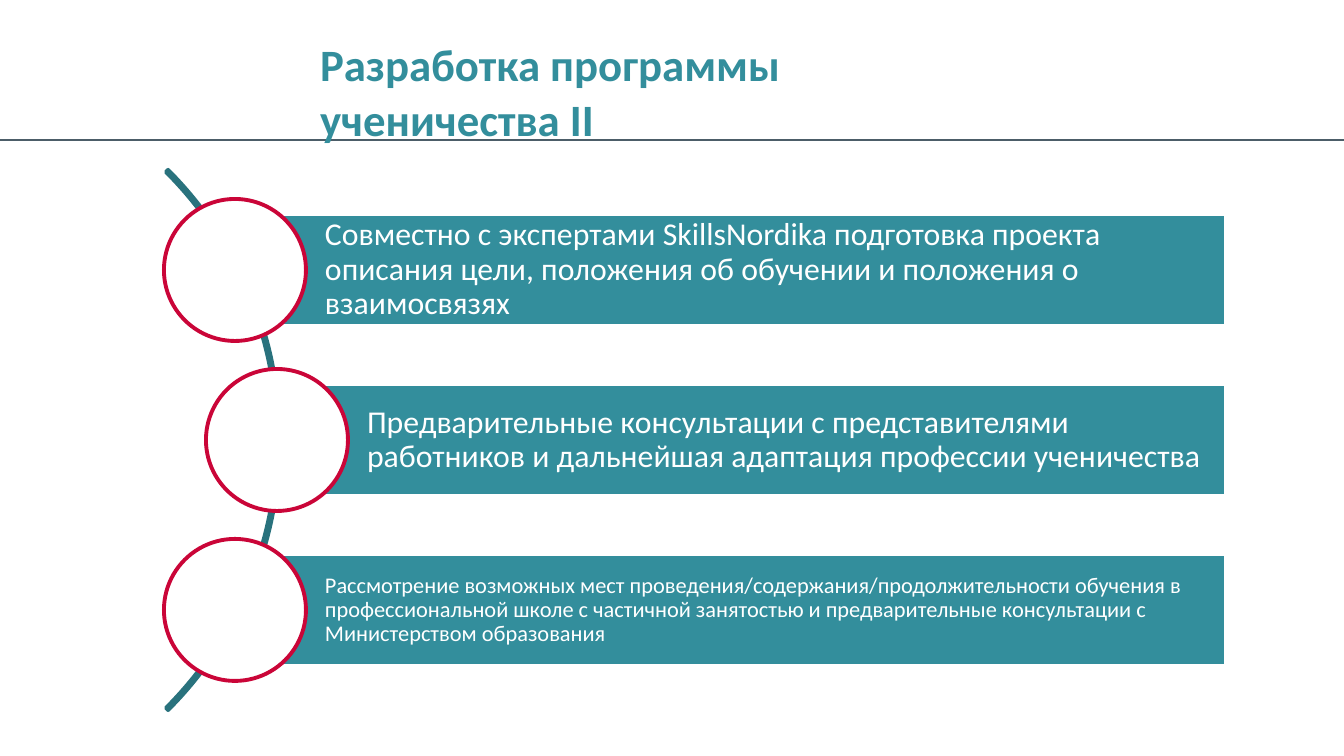
from lxml import etree
from pptx import Presentation, util as u
from pptx.dml.color import RGBColor
from pptx.enum import shapes, text
from pptx.oxml.ns import qn

TITLE = "Разработка программы ученичества II"
STEPS = [
    ("Совместно с экспертами SkillsNordika подготовка проекта описания цели, "
     "положения об обучении и положения о взаимосвязях", 235, 17, 7),
    ("Предварительные консультации с представителями работников и дальнейшая "
     "адаптация профессии ученичества", 277, 17, 7),
    ("Рассмотрение возможных мест проведения/содержания/продолжительности обучения "
     "в профессиональной школе с частичной занятостью и предварительные "
     "консультации с Министерством образования", 235, 12, 4),
]
COLORS = {"teal": "338E9C", "arc": "29727D", "rule": "4C5D68",
          "ring": "CA0538", "white": "FFFFFF"}
FONT = "Calibri"
SCALE = 914400 / 134.4
WIDTH, HEIGHT = 1344, 756
RULE_Y = 140
MIDDLE_Y, STEP_GAP = 440, 170
BAR_RIGHT, BAR_HEIGHT, BAR_INDENT = 1226, 112, 90
CIRCLE_SIZE = 142
ARC_CENTER_X, ARC_SIZE = -102, 764


def px(value):
    return u.Emu(round(value * SCALE))


def color(name):
    return RGBColor.from_string(COLORS[name])


def add_shape(page, kind, left, top, width, height, line, fill=None):
    shape = page.shapes.add_shape(kind, px(left), px(top), px(width), px(height))
    shape.shadow.inherit = False
    if fill:
        shape.fill.solid()
        shape.fill.fore_color.rgb = color(fill)
    else:
        shape.fill.background()
    shape.line.color.rgb = color(line)
    shape.line.width = u.Pt(2.08)
    return shape


def write(shape, words, size, ink, spacing, insets, anchor, bold=False):
    frame = shape.text_frame
    frame.word_wrap = True
    frame.vertical_anchor = anchor
    frame.margin_left, frame.margin_top, frame.margin_right, frame.margin_bottom = map(px, insets)
    para = frame.paragraphs[0]
    para.text = words
    para.alignment = text.PP_ALIGN.LEFT
    para.line_spacing = spacing
    para.font.name = FONT
    para.font.size = u.Pt(size)
    para.font.bold = bold
    para.font.color.rgb = color(ink)


def main():
    deck = Presentation()
    deck.slide_width, deck.slide_height = px(WIDTH), px(HEIGHT)
    page = deck.slides.add_slide(deck.slide_layouts[6])

    rule = page.shapes.add_connector(
        shapes.MSO_CONNECTOR.STRAIGHT, px(WIDTH), px(RULE_Y), px(0), px(RULE_Y))
    rule.line.color.rgb = color("rule")
    rule.line.width = u.Pt(1.5)
    etree.SubElement(rule._element.spPr, qn("a:effectLst"))

    title = page.shapes.add_textbox(px(320), px(34), px(706), px(91))
    write(title, TITLE, 24, "teal", u.Pt(30), (0, 0, 0, 0), text.MSO_ANCHOR.TOP, bold=True)

    arc = add_shape(page, shapes.MSO_SHAPE.BLOCK_ARC, ARC_CENTER_X - ARC_SIZE / 2,
                    MIDDLE_Y - ARC_SIZE / 2, ARC_SIZE, ARC_SIZE, "arc")
    for index, value in enumerate((189, 27, 0.004)):
        arc.adjustments[index] = value

    for index, (words, center_x, size, inset) in enumerate(STEPS):
        center_y = MIDDLE_Y + (index - 1) * STEP_GAP
        bar = add_shape(page, shapes.MSO_SHAPE.RECTANGLE, center_x, center_y - BAR_HEIGHT / 2,
                        BAR_RIGHT - center_x, BAR_HEIGHT, "white", "teal")
        write(bar, words, size, "white", 0.9, (BAR_INDENT, inset, inset, inset),
              text.MSO_ANCHOR.MIDDLE)
        add_shape(page, shapes.MSO_SHAPE.OVAL, center_x - CIRCLE_SIZE / 2,
                  center_y - CIRCLE_SIZE / 2, CIRCLE_SIZE, CIRCLE_SIZE, "ring", "white")

    deck.save("out.pptx")


if __name__ == "__main__":
    main()
